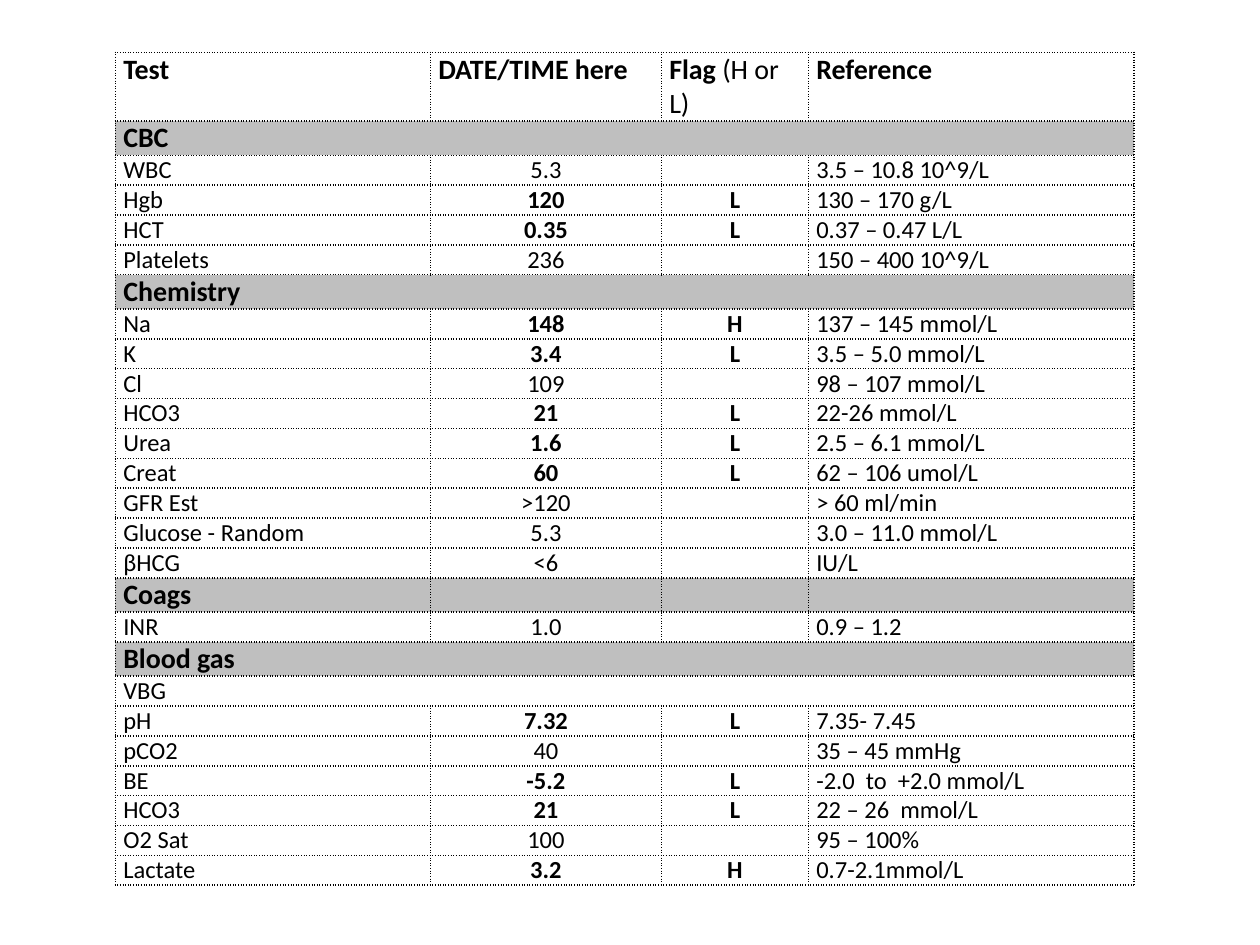
from dataclasses import dataclass

from lxml import etree
from pptx import Presentation
from pptx.dml.color import RGBColor
from pptx.enum import text
from pptx.oxml import ns
from pptx.util import Pt


@dataclass(frozen=True)
class Theme:
    font: str = "Calibri"
    ink: str = "000000"
    paper: str = "FFFFFF"
    band: str = "BFBFBF"
    heading_size: int = 16
    body_size: int = 14
    border_width: int = 1


HEADER = ["Test", "DATE/TIME here", "Flag (H or L)", "Reference"]
COLUMN_WIDTHS = [180, 132, 84, 186]
HEADER_HEIGHT, SECTION_HEIGHT, RESULT_HEIGHT = 39, 19.5, 17
CENTERED_COLUMNS = (1, 2)
UNMERGED_SECTIONS = ("Coags",)

SECTIONS = {
    "CBC": [
        ("WBC", "5.3", "", "3.5 – 10.8 10^9/L"),
        ("Hgb", "120", "L", "130 – 170 g/L"),
        ("HCT", "0.35", "L", "0.37 – 0.47 L/L"),
        ("Platelets", "236", "", "150 – 400 10^9/L"),
    ],
    "Chemistry": [
        ("Na", "148", "H", "137 – 145 mmol/L"),
        ("K", "3.4", "L", "3.5 – 5.0 mmol/L"),
        ("Cl", "109", "", "98 – 107 mmol/L"),
        ("HCO3", "21", "L", "22-26 mmol/L"),
        ("Urea", "1.6", "L", "2.5 – 6.1 mmol/L"),
        ("Creat", "60", "L", "62 – 106 umol/L"),
        ("GFR Est", ">120", "", "> 60 ml/min"),
        ("Glucose - Random", "5.3", "", "3.0 – 11.0 mmol/L"),
        ("βHCG", "<6", "", "IU/L"),
    ],
    "Coags": [
        ("INR", "1.0", "", "0.9 – 1.2"),
    ],
    "Blood gas": [
        ("VBG",),
        ("pH", "7.32", "L", "7.35- 7.45"),
        ("pCO2", "40", "", "35 – 45 mmHg"),
        ("BE", "-5.2", "L", "-2.0  to  +2.0 mmol/L"),
        ("HCO3", "21", "L", "22 – 26  mmol/L"),
        ("O2 Sat", "100", "", "95 – 100%"),
        ("Lactate", "3.2", "H", "0.7-2.1mmol/L"),
    ],
}


class LabSlide:
    def __init__(self, slide, theme):
        self.slide = slide
        self.theme = theme

    def add_table(self, left, top, widths, heights):
        frame = self.slide.shapes.add_table(
            len(heights), len(widths), Pt(left), Pt(top), Pt(sum(widths)), Pt(sum(heights)))
        table = frame.table
        table.first_row = table.horz_banding = False
        for column, width in zip(table.columns, widths):
            column.width = Pt(width)
        for row, height in zip(table.rows, heights):
            row.height = Pt(height)
        return table

    def add_borders(self, cell):
        properties = cell._tc.get_or_add_tcPr()
        for side in ("L", "R", "T", "B"):
            line = etree.SubElement(properties, ns.qn(f"a:ln{side}"),
                                    w=str(Pt(self.theme.border_width)))
            fill = etree.SubElement(line, ns.qn("a:solidFill"))
            etree.SubElement(fill, ns.qn("a:srgbClr"), val=self.theme.ink)
            etree.SubElement(line, ns.qn("a:prstDash"), val="dot")

    def style_cell(self, cell, size, bold=False, fill=None, centered=False):
        cell.margin_left = cell.margin_right = Pt(4.5)
        cell.margin_top = cell.margin_bottom = 0
        self.add_borders(cell)
        if fill:
            cell.fill.solid()
            cell.fill.fore_color.rgb = RGBColor.from_string(fill)
        else:
            cell.fill.background()
        paragraph = cell.text_frame.paragraphs[0]
        if centered:
            paragraph.alignment = text.PP_ALIGN.CENTER
        for run in paragraph.runs:
            run.font.name = self.theme.font
            run.font.size = Pt(size)
            run.font.bold = bold
            run.font.color.rgb = RGBColor.from_string(self.theme.ink)
        if not paragraph.runs:
            etree.SubElement(paragraph._p, ns.qn("a:endParaRPr"), sz=str(size * 100))

    def fill_header(self, row):
        for cell, label in zip(row.cells, HEADER):
            name, bracket, note = label.partition("(")
            paragraph = cell.text_frame.paragraphs[0]
            paragraph.add_run().text = name
            if note:
                paragraph.add_run().text = bracket + note
            self.style_cell(cell, self.theme.heading_size, True, self.theme.paper)
            for run in paragraph.runs[1:]:
                run.font.bold = False

    def fill_section(self, row, name):
        cells = list(row.cells)
        cells[0].text_frame.text = name
        for cell in cells:
            self.style_cell(cell, self.theme.heading_size, True, self.theme.band)
        if name not in UNMERGED_SECTIONS:
            cells[0].merge(cells[-1])

    def fill_result(self, row, values):
        cells = list(row.cells)
        for cell, value in zip(cells, values):
            cell.text_frame.text = value
        flagged = len(values) > 1 and bool(values[2])
        for index, cell in enumerate(cells):
            centered = index in CENTERED_COLUMNS
            self.style_cell(cell, self.theme.body_size, flagged and centered, centered=centered)
        if len(values) == 1:
            cells[0].merge(cells[-1])

    def add_lab_results(self, left, top):
        heights = [HEADER_HEIGHT]
        for results in SECTIONS.values():
            heights += [SECTION_HEIGHT] + [RESULT_HEIGHT] * len(results)
        table = self.add_table(left, top, COLUMN_WIDTHS, heights)
        rows = iter(table.rows)
        self.fill_header(next(rows))
        for name, results in SECTIONS.items():
            self.fill_section(next(rows), name)
            for values in results:
                self.fill_result(next(rows), values)


def main():
    presentation = Presentation()
    presentation.slide_width, presentation.slide_height = Pt(720), Pt(540)
    slide = presentation.slides.add_slide(presentation.slide_layouts[6])
    LabSlide(slide, Theme()).add_lab_results(66, 30)
    presentation.save("out.pptx")


if __name__ == "__main__":
    main()
